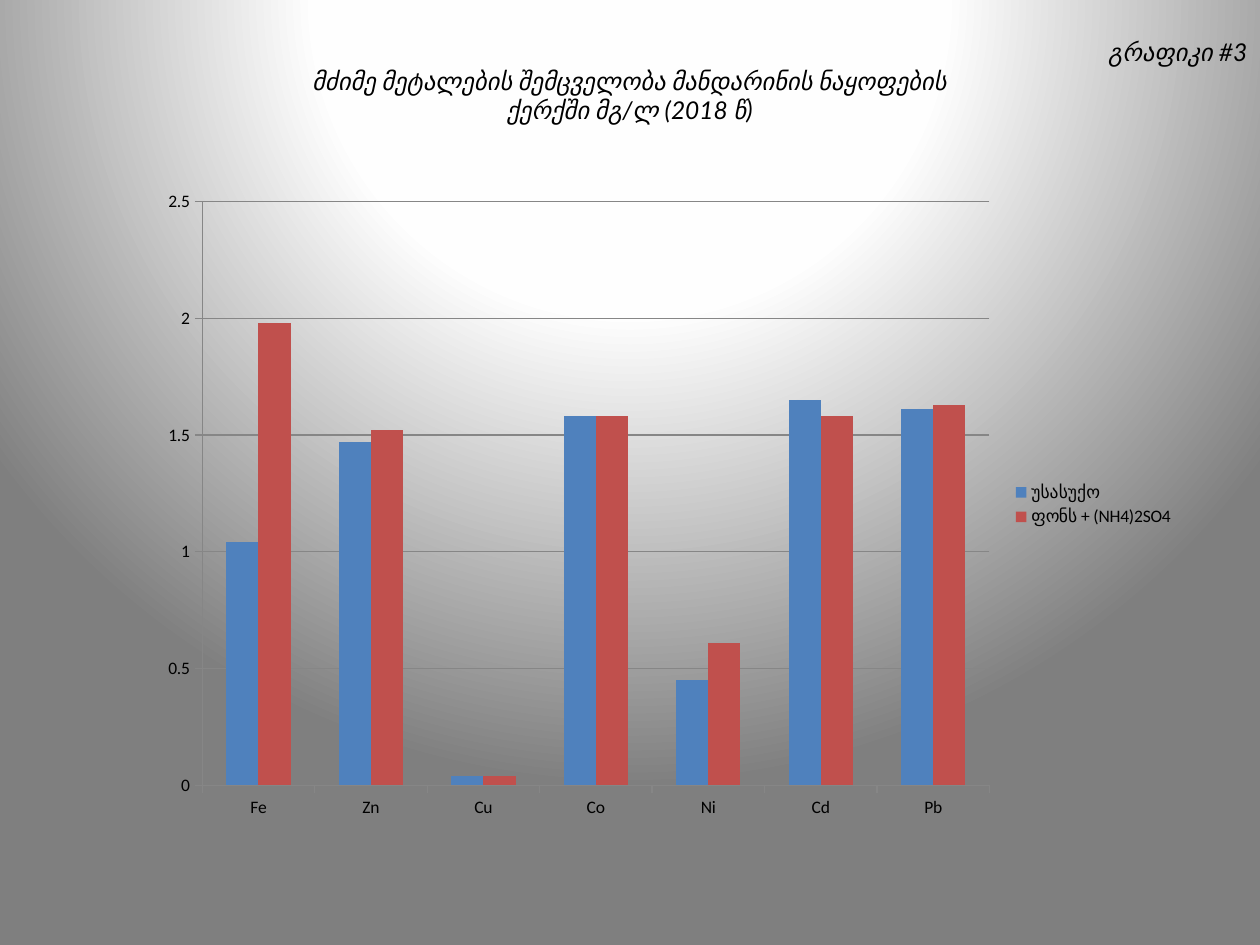
from pptx import Presentation
from pptx import util as u
from pptx.chart.data import CategoryChartData
from pptx.dml.color import RGBColor
from pptx.enum import chart as charts, text
from pptx.oxml import parse_xml
from pptx.oxml.ns import nsdecls, qn

BLACK = RGBColor(0x00, 0x00, 0x00)
AXIS_GRAY = RGBColor(0x86, 0x86, 0x86)
BLUE = RGBColor(0x4F, 0x81, 0xBD)
RED = RGBColor(0xC0, 0x50, 0x4D)
BACKDROP = (
    (0, RGBColor(0xFF, 0xFF, 0xFF)),
    (40, RGBColor(0xFE, 0xFE, 0xFE)),
    (100, RGBColor(0x7F, 0x7F, 0x7F)),
)

HEADING = (
    ("გრაფიკი #3", text.PP_ALIGN.RIGHT),
    ("მძიმე მეტალების შემცველობა მანდარინის ნაყოფების", text.PP_ALIGN.CENTER),
    ("ქერქში მგ/ლ (2018 წ)", text.PP_ALIGN.CENTER),
)
METALS = ("Fe", "Zn", "Cu", "Co", "Ni", "Cd", "Pb")
TREATMENTS = (
    ("უსასუქო", (1.04, 1.47, 0.04, 1.58, 0.45, 1.65, 1.61), BLUE),
    ("ფონს + (NH4)2SO4", (1.98, 1.52, 0.04, 1.58, 0.61, 1.58, 1.63), RED),
)


def apply(target, formats):
    for name, value in formats.items():
        setattr(target, name, value)


def set_font(font, color, **formats):
    apply(font, formats)
    font.color.rgb = color


def paint_background(slide):
    slide.background.fill.gradient()
    stops = "".join(
        f'<a:gs pos="{pos * 1000}"><a:srgbClr val="{color}"/></a:gs>'
        for pos, color in BACKDROP
    )
    radial = parse_xml(
        f'<a:gradFill {nsdecls("a")} rotWithShape="1"><a:gsLst>{stops}</a:gsLst>'
        '<a:path path="circle">'
        '<a:fillToRect l="50000" t="-80000" r="50000" b="180000"/>'
        "</a:path></a:gradFill>"
    )
    linear = next(slide.element.iter(qn("a:gradFill")))
    linear.getparent().replace(linear, radial)


def write_heading(slide):
    heading = slide.shapes.title
    apply(heading, {
        "left": u.Inches(0), "top": u.Inches(0),
        "width": u.Inches(10), "height": u.Inches(1.35),
    })
    frame = heading.text_frame
    apply(frame, {
        "word_wrap": True,
        "auto_size": text.MSO_AUTO_SIZE.NONE,
        "vertical_anchor": text.MSO_ANCHOR.TOP,
        "margin_top": u.Inches(0.29),
    })
    frame.text = "\n".join(line for line, _ in HEADING)
    for paragraph, (_, alignment) in zip(frame.paragraphs, HEADING):
        paragraph.alignment = alignment
        set_font(paragraph.runs[0].font, BLACK,
                 name="Lato", size=u.Pt(14), italic=True)


def style_line(line):
    line.color.rgb = AXIS_GRAY
    line.width = u.Pt(0.75)


def add_metal_chart(slide):
    data = CategoryChartData()
    data.categories = METALS
    for name, values, _ in TREATMENTS:
        data.add_series(name, values)
    chart = slide.shapes.add_chart(
        charts.XL_CHART_TYPE.COLUMN_CLUSTERED,
        u.Inches(1.17), u.Inches(1.42), u.Inches(8.25), u.Inches(5.17), data,
    ).chart
    apply(chart, {"has_title": False, "has_legend": True})
    set_font(chart.font, BLACK, name="Calibri", size=u.Pt(10))
    apply(chart.legend, {
        "position": charts.XL_LEGEND_POSITION.RIGHT,
        "include_in_layout": False,
    })

    apply(chart.value_axis, {
        "minimum_scale": 0, "maximum_scale": 2.5, "major_unit": 0.5,
        "has_major_gridlines": True,
    })
    for axis in (chart.category_axis, chart.value_axis):
        axis.major_tick_mark = charts.XL_TICK_MARK.OUTSIDE
        style_line(axis.format.line)
    style_line(chart.value_axis.major_gridlines.format.line)

    columns = chart.plots[0]
    apply(columns, {"gap_width": 150, "overlap": 0, "vary_by_categories": False})
    for series, (_, _, color) in zip(columns.series, TREATMENTS):
        series.format.fill.solid()
        series.format.fill.fore_color.rgb = color


def main():
    deck = Presentation()
    apply(deck, {"slide_width": u.Inches(10), "slide_height": u.Inches(7.5)})
    slide = deck.slides.add_slide(deck.slide_layouts[5])
    paint_background(slide)
    write_heading(slide)
    add_metal_chart(slide)
    deck.save("out.pptx")


if __name__ == "__main__":
    main()
